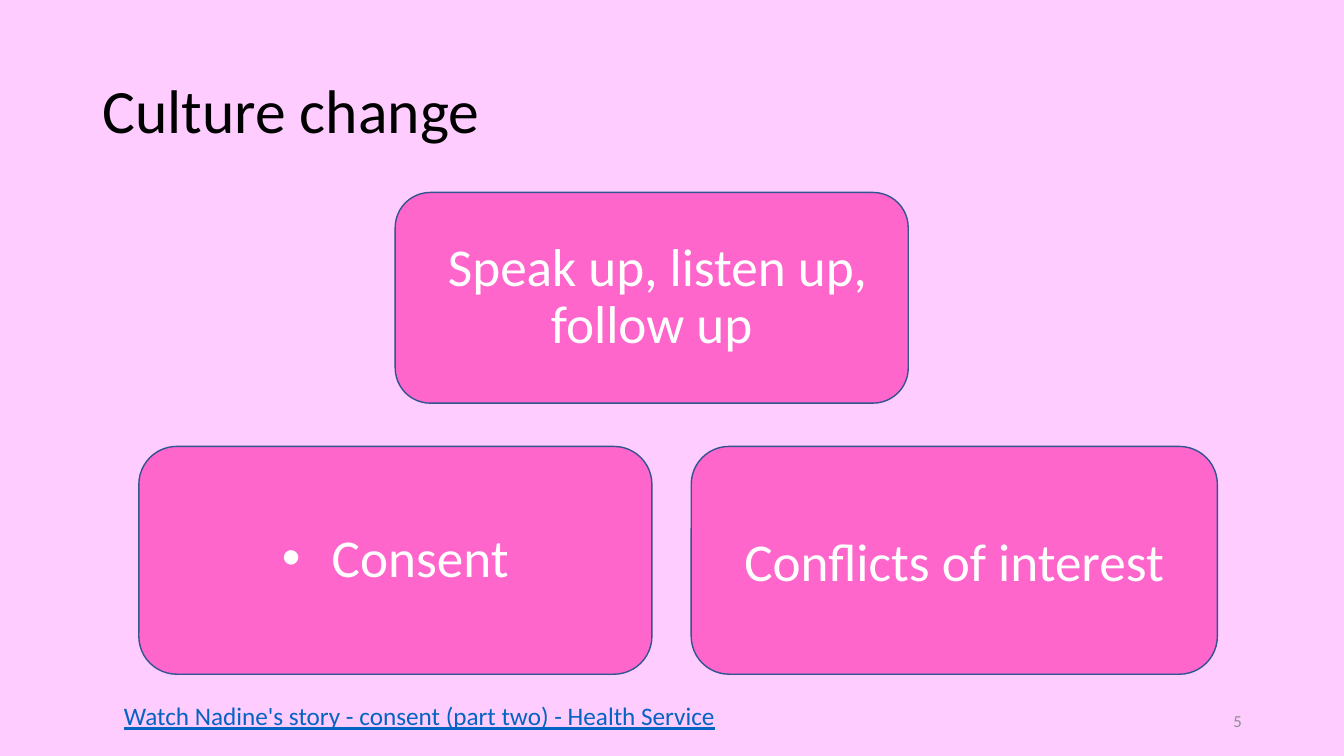
from lxml import etree
from pptx import Presentation
from pptx.dml.color import RGBColor
from pptx.enum import shapes, text
from pptx.oxml import ns
from pptx.util import Cm, Pt

COLOURS = {
    "background": "FFCCFF",
    "card": "FF66CC",
    "outline": "325491",
    "title": "000000",
    "card text": "FFFFFF",
    "link": "0563C1",
    "number": "8C8C8C",
}
LEFT, CENTRE, RIGHT = text.PP_ALIGN.LEFT, text.PP_ALIGN.CENTER, text.PP_ALIGN.RIGHT
MIDDLE, TOP = text.MSO_ANCHOR.MIDDLE, text.MSO_ANCHOR.TOP


def colour(name):
    return RGBColor.from_string(COLOURS[name])


def place(shape, left, top, width, height):
    shape.left, shape.top = Cm(left), Cm(top)
    shape.width, shape.height = Cm(width), Cm(height)


def write(shape, words, size, colour_name, align=LEFT, anchor=MIDDLE):
    """Fill a shape with one formatted paragraph and return it."""
    frame = shape.text_frame
    frame.text = words
    frame.word_wrap = True
    frame.auto_size = text.MSO_AUTO_SIZE.NONE
    frame.vertical_anchor = anchor
    paragraph = frame.paragraphs[0]
    paragraph.alignment = align
    paragraph.font.name = "Calibri"
    paragraph.font.size = Pt(size)
    paragraph.font.color.rgb = colour(colour_name)
    return paragraph


def style_card(shape, words):
    shape.fill.solid()
    shape.fill.fore_color.rgb = colour("card")
    shape.line.color.rgb = colour("outline")
    shape.line.width = Pt(1)
    return write(shape, words, 38, "card text", CENTRE)


def add_card(slide, words, *box):
    shape = slide.shapes.add_shape(
        shapes.MSO_SHAPE.ROUNDED_RECTANGLE, *[Cm(length) for length in box])
    shape.shadow.inherit = False
    return style_card(shape, words)


def turn_body_into_card(body, words, *box):
    """Give the body placeholder a rounded outline and no bullet."""
    place(body, *box)
    geometry = etree.SubElement(body._element.spPr, ns.qn("a:prstGeom"), prst="roundRect")
    etree.SubElement(geometry, ns.qn("a:avLst"))
    properties = body.text_frame.paragraphs[0]._p.get_or_add_pPr()
    properties.set("marL", "0")
    properties.set("indent", "0")
    etree.SubElement(properties, ns.qn("a:buNone"))
    return style_card(body, words)


def add_label(slide, words, box, *style):
    label = slide.shapes.add_textbox(*[Cm(length) for length in box])
    return write(label, words, *style)


def main():
    presentation = Presentation()
    presentation.slide_width, presentation.slide_height = Cm(33.87), Cm(19.05)
    slide = presentation.slides.add_slide(presentation.slide_layouts[1])
    slide.background.fill.solid()
    slide.background.fill.fore_color.rgb = colour("background")

    # Title
    title = slide.shapes.title
    place(title, 2.33, 1.01, 29.21, 3.68)
    write(title, "Culture change", 44, "title").line_spacing = 0.9

    # Cards: two below, one above
    consent = turn_body_into_card(
        slide.placeholders[1], " Consent", 3.5, 11.25, 12.93, 5.74)
    add_card(slide, "Conflicts of interest", 17.42, 11.25, 13.26, 5.74)
    speak_up = add_card(
        slide, " Speak up, listen up, follow up", 9.96, 4.85, 12.93, 5.31)
    for paragraph in (consent, speak_up):
        paragraph.line_spacing = 0.9
        paragraph.space_before = Pt(10)

    # Footer: link text and slide number
    link = add_label(slide, "Watch Nadine's story - consent (part two) - Health Service",
                     (2.87, 17.53, 16.94, 1.02), 18, "link", LEFT, TOP)
    link.font.underline = True
    add_label(slide, "5", (23.93, 17.65, 7.62, 1.02), 12, "number", RIGHT)

    presentation.save("out.pptx")


if __name__ == "__main__":
    main()
